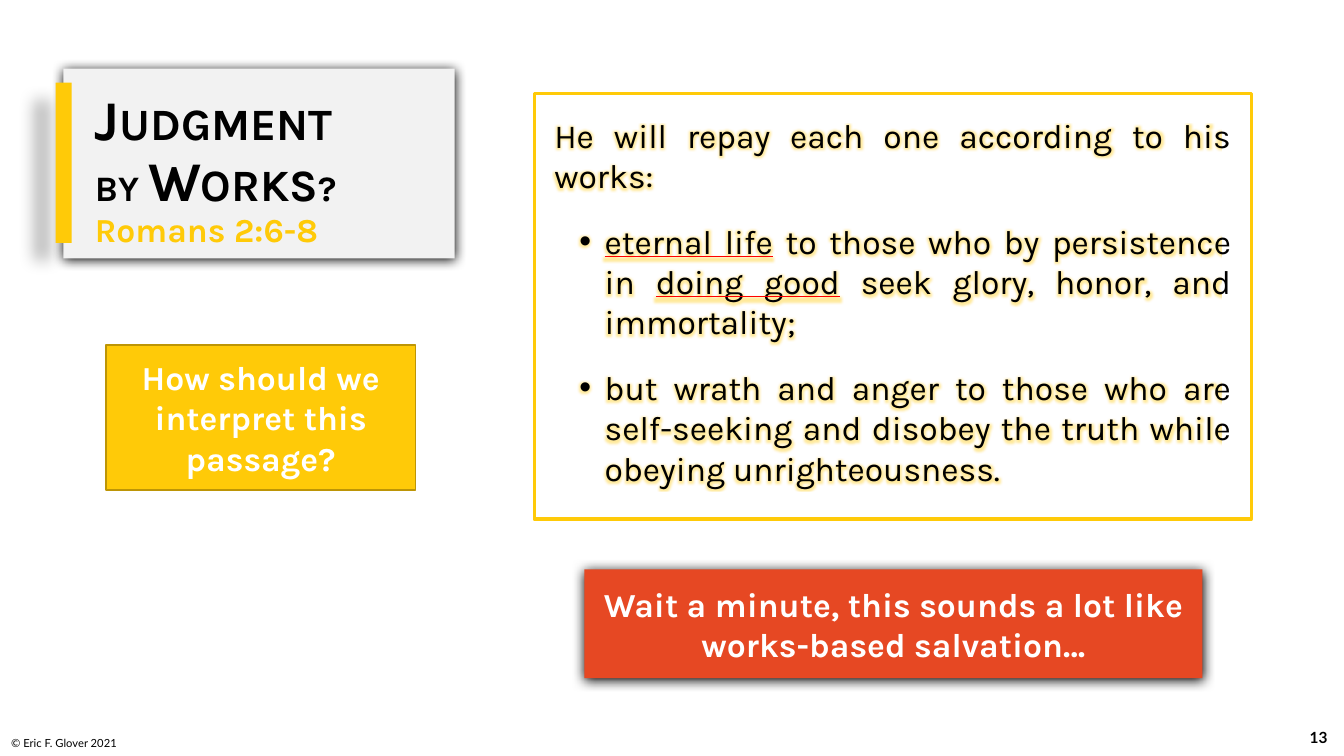
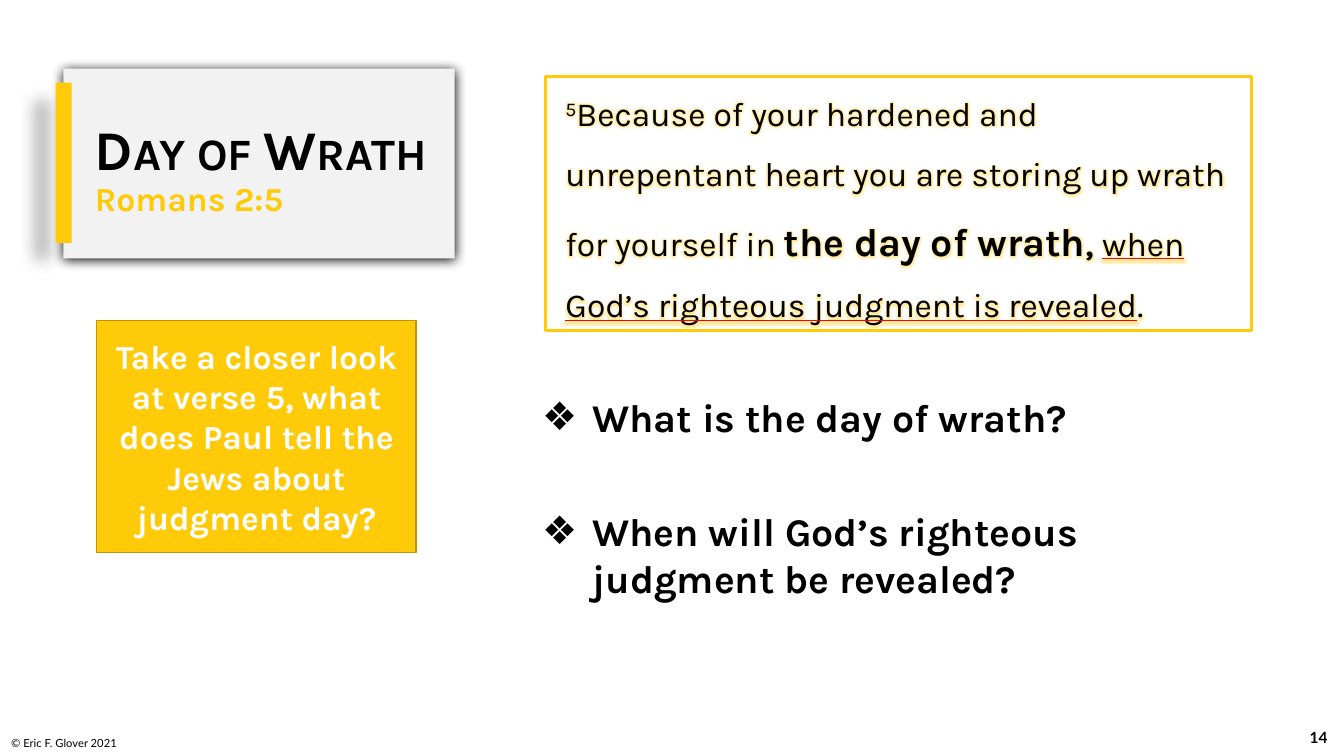
from lxml import etree
from pptx import Presentation
from pptx.dml.color import RGBColor
from pptx.enum.shapes import MSO_SHAPE
from pptx.enum.text import MSO_ANCHOR, MSO_AUTO_SIZE, PP_ALIGN
from pptx.oxml.ns import qn
from pptx.util import Cm, Pt

RECT = MSO_SHAPE.RECTANGLE
TOP, MIDDLE, BOTTOM = MSO_ANCHOR.TOP, MSO_ANCHOR.MIDDLE, MSO_ANCHOR.BOTTOM
LEFT, CENTER, JUSTIFY = PP_ALIGN.LEFT, PP_ALIGN.CENTER, PP_ALIGN.JUSTIFY

BLACK, WHITE, GREY = "000000", "FFFFFF", "F2F2F2"
YELLOW, GOLD, ORANGE, RED = "FFCA08", "BD9506", "E64823", "FF0000"
HEAD, BODY = "Karla", "Lato"
FOOTER = "© Eric F. Glover 2021"

CARD_BOX = (1.6, 1.73, 9.86, 4.78)
BAR_BOX = (1.4, 2.08, 0.41, 4.04)
TITLE_BOX = (2.39, 1.93, 8.89, 4.75)
NUMBER_BOX = (32.61, 18.06, 1.24, 1.02)
FOOTER_BOX = (0.03, 18.31, 3.99, 0.71)
CARD_SHADOW = dict(alpha=100, blur=8.5, dist=1, angle=90)
BAR_SHADOW = dict(alpha=28, blur=11.8, dist=19.7, angle=141)
QUOTE_INSETS = (0.51, 0, 0.51, 0.25)

BIG = dict(size=40, bold=True, caps=True)
SMALL = dict(size=32, bold=True, caps=True)
VERSE = dict(size=24, bold=True, color=YELLOW)
BANNER = dict(size=24, bold=True, color=WHITE)
QUESTION = dict(size=28, bold=True)
QUOTE = dict(size=24, glow=True)
MARKED = dict(QUOTE, underline=True)
STRONG = dict(QUOTE, bold=True)

SLIDES = [
    dict(
        number=13,
        title=[[("Judgment", BIG)], [("by ", SMALL), ("Works", BIG), ("?", SMALL)],
               [("Romans 2:6-8", VERSE)]],
        quote_box=(13.46, 2.36, 18.08, 10.72),
        quote=[
            dict(runs=[("He will repay each one according to his works:", QUOTE)]),
            dict(bullet="•", runs=[
                ("eternal life", MARKED), (" to those who by persistence in ", QUOTE),
                ("doing good", MARKED), (" seek glory, honor, and immortality;", QUOTE)]),
            dict(bullet="•", runs=[
                ("but wrath and anger to those who are self-seeking and disobey "
                 "the truth while obeying unrighteousness.", QUOTE)]),
        ],
        quote_style=dict(align=JUSTIFY, after=18, indent=(1.27, -0.64)),
        prompt_box=(2.67, 8.69, 7.8, 3.66),
        prompt="How should we interpret this passage?",
        alert_box=(14.73, 14.35, 15.57, 2.74),
        alert="Wait a minute, this sounds a lot like works-based salvation…",
    ),
    dict(
        number=14,
        title=[[("Day of Wrath", BIG)], [("Romans 2:5", VERSE)]],
        quote_box=(13.74, 1.93, 17.81, 6.4),
        quote=[dict(runs=[
            ("5", dict(QUOTE, raised=True)),
            ("Because of your hardened and unrepentant heart you are storing up "
             "wrath for yourself in ", QUOTE),
            ("the day of wrath", dict(STRONG, size=28)), (", ", STRONG),
            ("when God’s righteous judgment is revealed", MARKED), (".", QUOTE)])],
        quote_style=dict(after=18, spacing=1.5),
        prompt_box=(2.44, 8.08, 8.05, 5.84),
        prompt="Take a closer look at verse 5, what does Paul tell the Jews about judgment day?",
        questions_box=(13.41, 9.78, 18.8, 7.34),
        questions=["What is the day of wrath?",
                   "When will God’s righteous judgment be revealed?"],
    ),
]


def rgb(value):
    """Turn a hex string into a colour."""
    return RGBColor.from_string(value)


def add_xml(parent, tag, **attrs):
    """Append a drawing element with the given attributes."""
    return etree.SubElement(parent, qn("a:" + tag), {k: str(v) for k, v in attrs.items()})


def add_run(p, text, size=24, bold=False, color=BLACK, font=HEAD, caps=False,
            underline=False, glow=False, raised=False):
    """Add one formatted run to a paragraph."""
    r = p.add_run()
    r.text = text
    r.font.size, r.font.bold, r.font.name = Pt(size), bold, font
    r.font.color.rgb = rgb(color)
    rpr = r.font._element
    latin = rpr.find(qn("a:latin"))
    if caps:
        rpr.set("cap", "small")
    if raised:
        rpr.set("baseline", "30000")
    if glow:
        effects = add_xml(rpr, "effectLst")
        halo = add_xml(add_xml(effects, "glow", rad=Pt(5)), "srgbClr", val=YELLOW)
        add_xml(halo, "alpha", val=40000)
        latin.addprevious(effects)
    if underline:
        r.font.underline = True
        ink = add_xml(rpr, "uFill")
        add_xml(add_xml(ink, "solidFill"), "srgbClr", val=RED)
        latin.addprevious(ink)


def set_frame(tf, anchor, insets=None):
    """Set wrapping, anchor and insets of a text frame."""
    tf.word_wrap, tf.auto_size, tf.vertical_anchor = True, MSO_AUTO_SIZE.NONE, anchor
    if insets:
        tf.margin_left, tf.margin_top, tf.margin_right, tf.margin_bottom = map(Cm, insets)


def write(tf, paragraphs, align=LEFT, after=0, spacing=1.0, indent=(0, 0)):
    """Fill a text frame with paragraphs of runs, bulleted where asked."""
    for i, item in enumerate(paragraphs):
        p = tf.add_paragraph() if i else tf.paragraphs[0]
        p.alignment, p.space_after, p.line_spacing = align, Pt(after), spacing
        for text, style in item["runs"]:
            add_run(p, text, **style)
        if "bullet" in item:
            ppr = p._p.get_or_add_pPr()
            ppr.set("marL", str(Cm(indent[0])))
            ppr.set("indent", str(Cm(indent[1])))
            add_xml(add_xml(ppr, "buClr"), "srgbClr", val=BLACK)
            add_xml(ppr, "buFont", typeface="Arial")
            add_xml(ppr, "buChar", char=item["bullet"])


def add_box(s, box, fill, line=None, width=1, shadow=None):
    """Add a filled rectangle with an optional outline and shadow."""
    sp = s.shapes.add_shape(RECT, *map(Cm, box))
    sp.fill.solid()
    sp.fill.fore_color.rgb = rgb(fill)
    if line:
        sp.line.color.rgb, sp.line.width = rgb(line), Pt(width)
    else:
        sp.line.fill.background()
    sp.shadow.inherit = False
    if shadow:
        effects = sp._element.spPr.find(qn("a:effectLst"))
        outer = add_xml(effects, "outerShdw", blurRad=Pt(shadow["blur"]),
                        dist=Pt(shadow["dist"]), dir=shadow["angle"] * 60000,
                        algn="ctr", rotWithShape=0)
        add_xml(add_xml(outer, "srgbClr", val=BLACK), "alpha", val=shadow["alpha"] * 1000)
    return sp


def add_banner(s, box, text, fill, **look):
    """Add a coloured box with centred bold white text."""
    tf = add_box(s, box, fill, **look).text_frame
    set_frame(tf, MIDDLE)
    write(tf, [dict(runs=[(text, BANNER)])], align=CENTER, after=12)


def add_text(s, box, paragraphs, anchor, **layout):
    """Add a plain text box."""
    tf = s.shapes.add_textbox(*map(Cm, box)).text_frame
    set_frame(tf, anchor)
    write(tf, paragraphs, **layout)


def add_title(s, lines):
    """Place the title placeholder on the card and fill its lines."""
    sp = s.shapes.title
    s.shapes._spTree.append(sp._element)
    sp.left, sp.top, sp.width, sp.height = map(Cm, TITLE_BOX)
    set_frame(sp.text_frame, MIDDLE, (0, 0, 0, 0))
    p = sp.text_frame.paragraphs[0]
    p.alignment, p.line_spacing = LEFT, 0.9
    for i, runs in enumerate(lines):
        if i:
            p.add_line_break()
            add_xml(p._p[-1], "rPr", sz=lines[i - 1][-1][1]["size"] * 100)
        for text, style in runs:
            add_run(p, text, **style)


def add_frame(s, number, title):
    """Add the title card, footer and slide number every slide shares."""
    label = dict(size=11, bold=True, font=BODY)
    add_text(s, NUMBER_BOX, [dict(runs=[(str(number), label)])], MIDDLE, align=CENTER, after=6)
    add_text(s, FOOTER_BOX, [dict(runs=[(FOOTER, dict(size=8, font=BODY))])], BOTTOM)
    add_box(s, CARD_BOX, GREY, shadow=CARD_SHADOW)
    add_box(s, BAR_BOX, YELLOW, shadow=BAR_SHADOW)
    add_title(s, title)


def main():
    """Build the slides and save them."""
    prs = Presentation()
    prs.slide_width, prs.slide_height = Cm(33.87), Cm(19.05)
    for item in SLIDES:
        s = prs.slides.add_slide(prs.slide_layouts[5])
        add_frame(s, item["number"], item["title"])
        tf = add_box(s, item["quote_box"], WHITE, line=YELLOW, width=2.25).text_frame
        set_frame(tf, MIDDLE, QUOTE_INSETS)
        write(tf, item["quote"], **item["quote_style"])
        add_banner(s, item["prompt_box"], item["prompt"], YELLOW, line=GOLD)
        if "alert" in item:
            add_banner(s, item["alert_box"], item["alert"], ORANGE, shadow=CARD_SHADOW)
        if "questions" in item:
            questions = [dict(bullet="❖", runs=[(q, QUESTION)]) for q in item["questions"]]
            add_text(s, item["questions_box"], questions, TOP, after=48, indent=(1.27, -1.27))
    prs.save("out.pptx")


if __name__ == "__main__":
    main()
